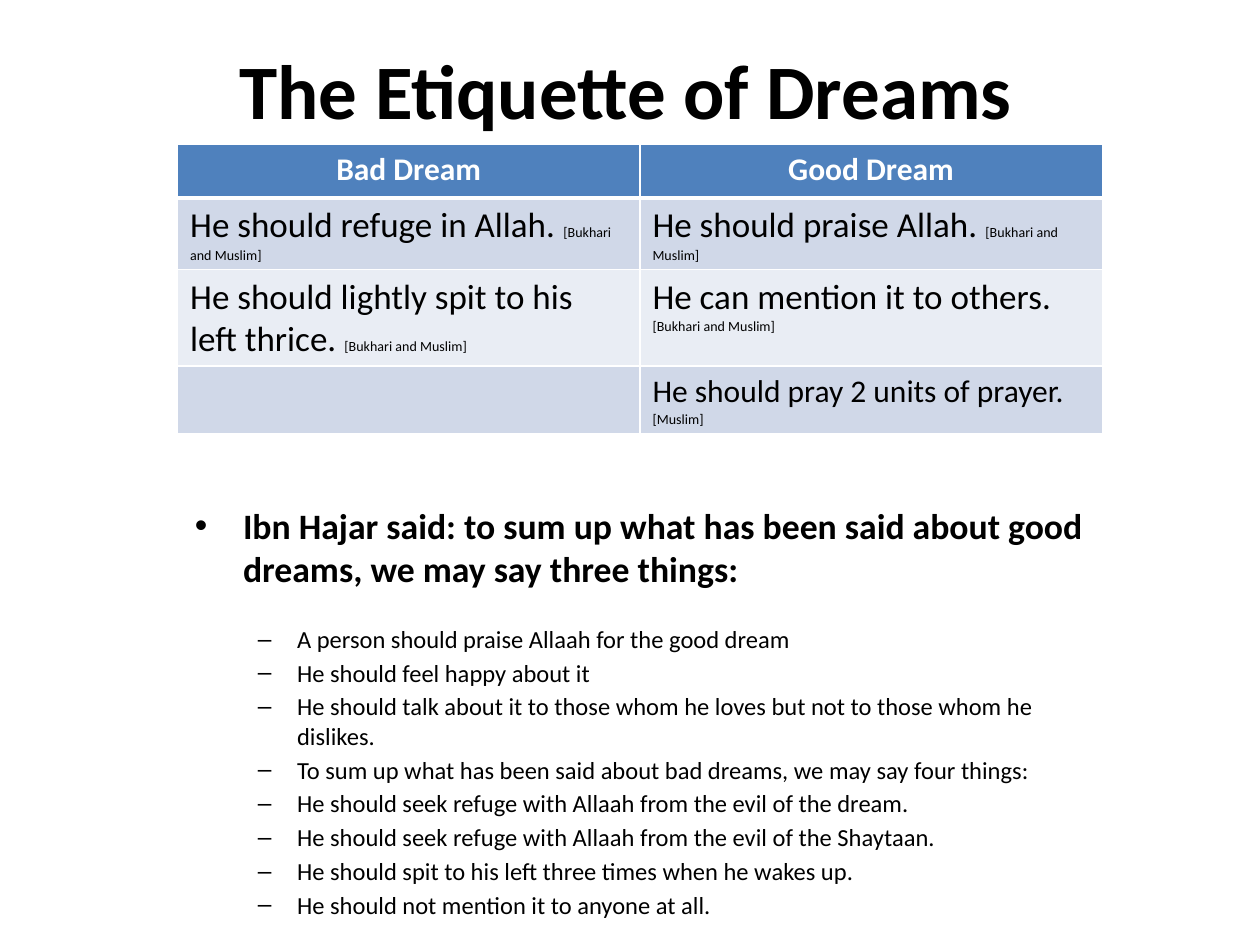
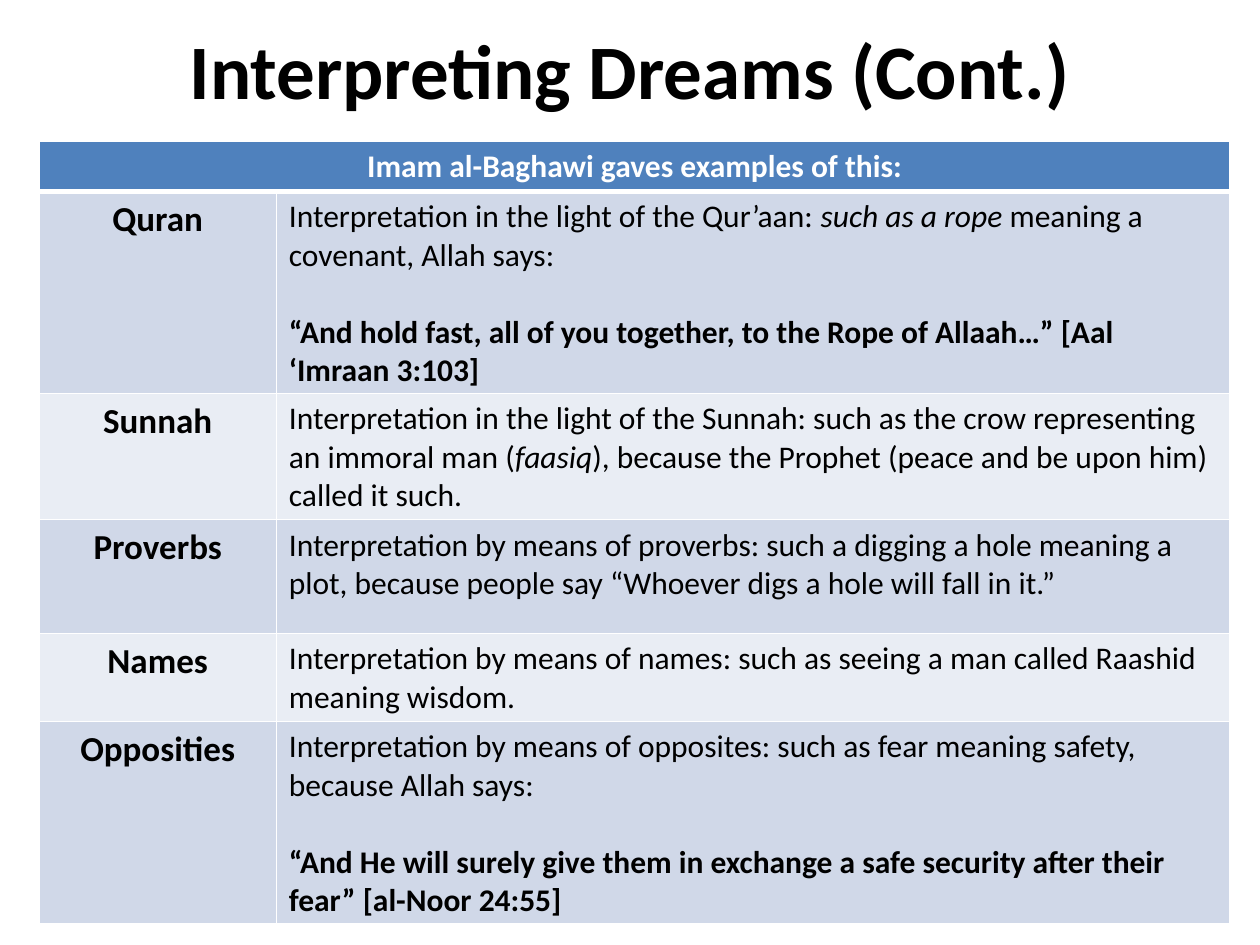
"""Build two slides on the etiquette and the interpretation of dreams."""
from dataclasses import dataclass

from lxml import etree
from pptx import Presentation
from pptx import util as u
from pptx.dml.color import RGBColor
from pptx.enum import text
from pptx.oxml.ns import qn

FONT = "Calibri"
COLOURS = {"ink": "000000", "paper": "FFFFFF", "header": "4F81BD",
           "odd": "D0D8E8", "even": "E9EDF4"}


@dataclass(frozen=True)
class Run:
    words: str
    size: float = 18
    bold: bool = False
    italic: bool = False
    colour: str = "ink"


@dataclass(frozen=True)
class Para:
    runs: tuple[Run, ...]
    centred: bool = False
    before: float = 0
    bullet: str = ""
    margin: float = 0
    hanging: float = 0


@dataclass(frozen=True)
class Box:
    left: float
    top: float
    width: float
    height: float

    def lengths(self) -> tuple[u.Length, ...]:
        """Return the four sides as lengths."""
        return tuple(u.Cm(side) for side in (self.left, self.top, self.width, self.height))


@dataclass(frozen=True)
class Grid:
    left: float
    top: float
    columns: tuple[float, ...]
    heights: tuple[float, ...]
    rows: tuple[tuple[tuple[Para, ...], ...], ...]


def write(frame, paras: tuple[Para, ...]) -> None:
    """Fill a text frame with paragraphs, run by run."""
    frame.word_wrap = True
    for index, para in enumerate(paras):
        line = frame.add_paragraph() if index else frame.paragraphs[0]
        line.alignment = text.PP_ALIGN.CENTER if para.centred else text.PP_ALIGN.LEFT
        line.space_before = u.Pt(para.before)
        if para.bullet:
            props = line._p.get_or_add_pPr()
            props.set("marL", str(u.Cm(para.margin)))
            props.set("indent", str(-u.Cm(para.hanging)))
            etree.SubElement(props, qn("a:buFont"), typeface="Arial")
            etree.SubElement(props, qn("a:buChar"), char=para.bullet)
        for part in para.runs:
            run = line.add_run()
            run.text = part.words
            run.font.name = FONT
            run.font.size = u.Pt(part.size)
            run.font.bold = part.bold
            run.font.italic = part.italic
            run.font.color.rgb = RGBColor.from_string(COLOURS[part.colour])


def add_title(slide, words: str, left: float, top: float) -> None:
    """Add the large centred title."""
    frame = slide.shapes.add_textbox(*Box(left, top, 22.86, 3.17).lengths()).text_frame
    frame.vertical_anchor = text.MSO_ANCHOR.MIDDLE
    write(frame, (Para((Run(words, 44, bold=True),), centred=True),))


def add_borders(cell, bottom: float) -> None:
    """Draw white lines round a cell."""
    props = cell._tc.get_or_add_tcPr()
    for side, width in (("L", 1), ("R", 1), ("T", 1), ("B", bottom)):
        edge = etree.SubElement(props, qn(f"a:ln{side}"), w=str(u.Pt(width)))
        fill = etree.SubElement(edge, qn("a:solidFill"))
        etree.SubElement(fill, qn("a:srgbClr"), val=COLOURS["paper"])


def add_grid(slide, grid: Grid) -> None:
    """Add a table with a header and banded rows."""
    box = Box(grid.left, grid.top, sum(grid.columns), sum(grid.heights))
    table = slide.shapes.add_table(
        len(grid.heights), len(grid.columns), *box.lengths()).table
    for column, width in zip(table.columns, grid.columns):
        column.width = u.Cm(width)
    for index, (height, row) in enumerate(zip(grid.heights, grid.rows)):
        table.rows[index].height = u.Cm(height)
        band = "header" if index == 0 else "odd" if index % 2 else "even"
        for cell in table.rows[index].cells:
            add_borders(cell, 1 if index else 3)
            cell.fill.solid()
            cell.fill.fore_color.rgb = RGBColor.from_string(COLOURS[band])
        if len(row) < len(grid.columns):
            table.cell(index, 0).merge(table.cell(index, len(grid.columns) - 1))
        for position, paras in enumerate(row):
            write(table.cell(index, position).text_frame, paras)


def heading(words: str) -> tuple[Para, ...]:
    """Return a header cell."""
    return (Para((Run(words, bold=True, colour="paper"),), centred=True),)


def topic(words: str) -> tuple[Para, ...]:
    """Return a row label."""
    return (Para((Run(words, 20, bold=True),), centred=True),)


def advice(words: str, source: str, size: float = 20) -> tuple[Para, ...]:
    """Return advice followed by its small source."""
    return (Para((Run(words + " ", size), Run(source, 8))),)


def meaning(*runs: Run, verse: str = "") -> tuple[Para, ...]:
    """Return an explanation, with a bold verse set apart below it."""
    quoted = (Para((Run(verse, bold=True),), before=22),) if verse else ()
    return (Para(runs), *quoted)


BOTH = "[Bukhari and Muslim]"
ETIQUETTE = Grid(3.58, 2.9, (9.32,) * 2, (1.09,) * 4, (
    (heading("Bad Dream"), heading("Good Dream")),
    (advice("He should refuge in Allah.", BOTH), advice("He should praise Allah.", BOTH)),
    (advice("He should lightly spit to his left thrice.", BOTH),
     advice("He can mention it to others.", BOTH)),
    ((), advice("He should pray 2 units of prayer.", "[Muslim]", 18)),
))

SAYING = ("Ibn Hajar said: to sum up what has been said about good dreams, "
          "we may say three things:")
POINTS = (
    "A person should praise Allaah for the good dream",
    "He should feel happy about it",
    "He should talk about it to those whom he loves but not to those whom he dislikes.",
    "To sum up what has been said about bad dreams, we may say four things:",
    "He should seek refuge with Allaah from the evil of the dream.",
    "He should seek refuge with Allaah from the evil of the Shaytaan.",
    "He should spit to his left three times when he wakes up.",
    "He should not mention it to anyone at all.",
)

EXAMPLES = Grid(0.79, 2.84, (4.78, 19.23), (0.94, 3.68, 2.29, 2.29, 1.6, 3.68), (
    (heading("Imam al-Baghawi gaves examples of this:"),),
    (topic("Quran"), meaning(
        Run("Interpretation in the light of the Qur’aan: "),
        Run("such as a rope", italic=True),
        Run(" meaning a covenant, Allah says:"),
        verse="“And hold fast, all of you together, to the Rope of Allaah…” "
              "[Aal ‘Imraan 3:103]")),
    (topic("Sunnah"), meaning(
        Run("Interpretation in the light of the Sunnah: such as the crow "
            "representing an immoral man ("),
        Run("faasiq", italic=True),
        Run("), because the Prophet (peace and be upon him) called it such."))),
    (topic("Proverbs"), meaning(
        Run("Interpretation by means of proverbs: such a digging a hole meaning "
            "a plot, because people say “Whoever digs a hole will fall in it.”"))),
    (topic("Names"), meaning(
        Run("Interpretation by means of names: such as seeing a man called "
            "Raashid meaning wisdom."))),
    (topic("Opposities"), meaning(
        Run("Interpretation by means of opposites: such as fear meaning safety, "
            "because Allah says:"),
        verse="“And He will surely give them in exchange a safe security after "
              "their fear” [al-Noor 24:55]")),
))


def add_summary(slide) -> None:
    """Add the saying and its list of points."""
    frame = slide.shapes.add_textbox(*Box(3.68, 7.98, 18.85, 9.93).lengths()).text_frame
    frame.margin_top = u.Cm(2.18)
    saying = Para((Run(SAYING, 20.4, bold=True),), bullet="•", margin=0.97, hanging=0.97)
    points = (Para((Run(point, 14),), before=2.5 if index else 19.5,
                   bullet="–", margin=2.06, hanging=0.79)
              for index, point in enumerate(POINTS))
    write(frame, (saying, *points))


def main() -> None:
    """Build and save the deck."""
    deck = Presentation()
    deck.slide_width, deck.slide_height = u.Cm(25.4), u.Cm(19.05)
    blank = deck.slide_layouts[6]

    etiquette = deck.slides.add_slide(blank)
    add_title(etiquette, "The Etiquette of Dreams", 1.19, 0.2)
    add_summary(etiquette)
    add_grid(etiquette, ETIQUETTE)

    interpreting = deck.slides.add_slide(blank)
    add_title(interpreting, "Interpreting Dreams (Cont.)", 1.27, -0.2)
    add_grid(interpreting, EXAMPLES)

    deck.save("out.pptx")


if __name__ == "__main__":
    main()
